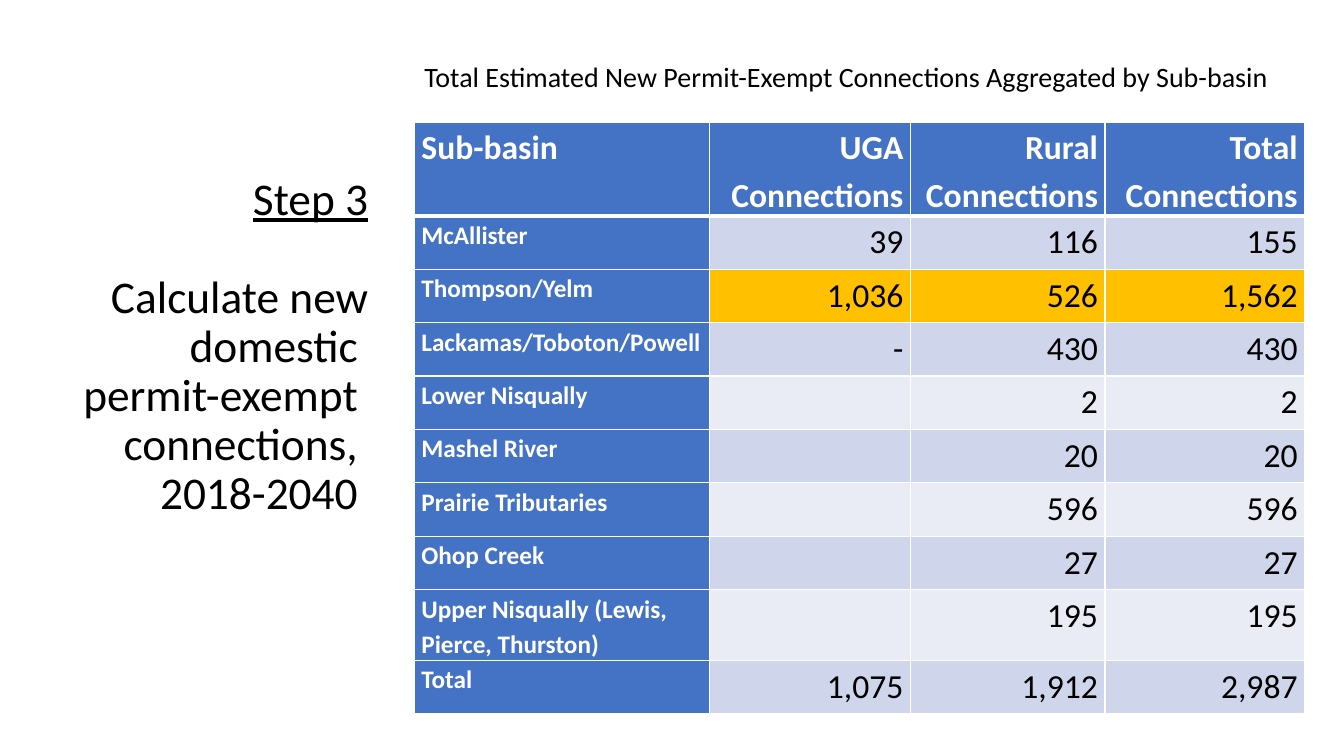
"""Build the slide on new permit-exempt connections by sub-basin."""
from dataclasses import dataclass

from lxml.etree import SubElement
from pptx import Presentation
from pptx.dml.color import RGBColor
from pptx.enum.text import MSO_ANCHOR as Anchor, PP_ALIGN as Align
from pptx.oxml.ns import qn
from pptx.util import Inches, Pt

STEP = "Step 3"
TASK = "Calculate new domestic \vpermit-exempt \vconnections, \v2018-2040 "
CAPTION = "Total Estimated New Permit-Exempt Connections Aggregated by Sub-basin"
HEADINGS = ("Sub-basin", "UGA Connections", "Rural Connections", "Total Connections")
BASINS = [
    ("McAllister", "39", "116", "155"),
    ("Thompson/Yelm", "1,036", "526", "1,562"),
    ("Lackamas/Toboton/Powell", "-", "430", "430"),
    ("Lower Nisqually", "", "2", "2"),
    ("Mashel River", "", "20", "20"),
    ("Prairie Tributaries", "", "596", "596"),
    ("Ohop Creek", "", "27", "27"),
    ("Upper Nisqually (Lewis, Pierce, Thurston)", "", "195", "195"),
    ("Total", "1,075", "1,912", "2,987"),
]
HIGHLIGHTED = "Thompson/Yelm"
TALL = "Upper Nisqually (Lewis, Pierce, Thurston)"

SLIDE_SIZE = (13.33, 7.5)
STEP_BOX = (0.31, 0.97, 3.44, 4.34)
STEP_INSET = 0.78
CAPTION_BOX = (4.11, 0.54, 8.84, 0.44)
TABLE_TOP = 1.21
COLUMNS = (2.93, 1.99, 1.93, 1.98)
HEADER_ROW, BASIN_ROW, TALL_ROW = 0.93, 0.53, 0.7


@dataclass(frozen=True)
class Theme:
    """Hold the colours and type sizes."""
    font: str = "Calibri"
    ink: str = "000000"
    paper: str = "FFFFFF"
    blue: str = "4472C4"
    gold: str = "FFC000"
    bands: tuple = ("CFD5EA", "E9EBF5")
    step: float = 32.4
    figure: float = 24
    caption: float = 20
    basin: float = 18


THEME = Theme()


def write(paragraph, text, size, color=THEME.ink, bold=False, underline=False,
          align=Align.LEFT, spacing=1.0, after=0):
    """Write text into a paragraph with its format."""
    paragraph.text = text
    paragraph.alignment = align
    paragraph.line_spacing = spacing
    paragraph.space_after = Pt(after)
    for run in paragraph.runs:
        font = run.font
        font.name, font.size = THEME.font, Pt(size)
        font.bold, font.underline = bold, underline
        font.color.rgb = RGBColor.from_string(color)


def add_frame(slide, box):
    """Add a wrapping text box and return its frame."""
    frame = slide.shapes.add_textbox(*map(Inches, box)).text_frame
    frame.word_wrap = True
    return frame


def style_cell(cell, fill, bottom=1):
    """Set the margins, white borders and fill of a cell."""
    cell.margin_left = cell.margin_right = Inches(0.07)
    cell.margin_top = cell.margin_bottom = 0
    properties = cell._tc.get_or_add_tcPr()
    for side, width in (("L", 1), ("R", 1), ("T", 1), ("B", bottom)):
        border = SubElement(properties, qn(f"a:ln{side}"), w=str(Pt(width)))
        solid = SubElement(border, qn("a:solidFill"))
        SubElement(solid, qn("a:srgbClr"), val=THEME.paper)
    cell.fill.solid()
    cell.fill.fore_color.rgb = RGBColor.from_string(fill)


def add_basins(slide):
    """Add the table of connections."""
    heights = [HEADER_ROW] + [TALL_ROW if b[0] == TALL else BASIN_ROW for b in BASINS]
    area = (CAPTION_BOX[0], TABLE_TOP, sum(COLUMNS), sum(heights))
    table = slide.shapes.add_table(len(heights), len(COLUMNS), *map(Inches, area)).table
    for column, width in zip(table.columns, COLUMNS):
        column.width = Inches(width)
    for r, (height, texts) in enumerate(zip(heights, [HEADINGS] + BASINS)):
        table.rows[r].height = Inches(height)
        band = THEME.gold if texts[0] == HIGHLIGHTED else THEME.bands[(r - 1) % 2]
        for c, text in enumerate(texts):
            heading = r == 0 or c == 0
            cell = table.cell(r, c)
            style_cell(cell, THEME.blue if heading else band,
                       bottom=3 if r == 0 else 1)
            if text:
                write(cell.text_frame.paragraphs[0], text,
                      THEME.basin if r and c == 0 else THEME.figure,
                      color=THEME.paper if heading else THEME.ink, bold=heading,
                      align=Align.RIGHT if c else Align.LEFT, spacing=1.15)


def main():
    """Build and save the slide."""
    deck = Presentation()
    deck.slide_width, deck.slide_height = map(Inches, SLIDE_SIZE)
    slide = deck.slides.add_slide(deck.slide_layouts[6])

    step = add_frame(slide, STEP_BOX)
    step.vertical_anchor = Anchor.TOP
    step.margin_top = Inches(STEP_INSET)
    write(step.paragraphs[0], STEP, THEME.step, underline=True,
          align=Align.RIGHT, spacing=0.9, after=35)
    write(step.add_paragraph(), TASK, THEME.step, align=Align.RIGHT, spacing=0.9)

    add_basins(slide)
    write(add_frame(slide, CAPTION_BOX).paragraphs[0], CAPTION, THEME.caption)
    deck.save("out.pptx")


if __name__ == "__main__":
    main()
